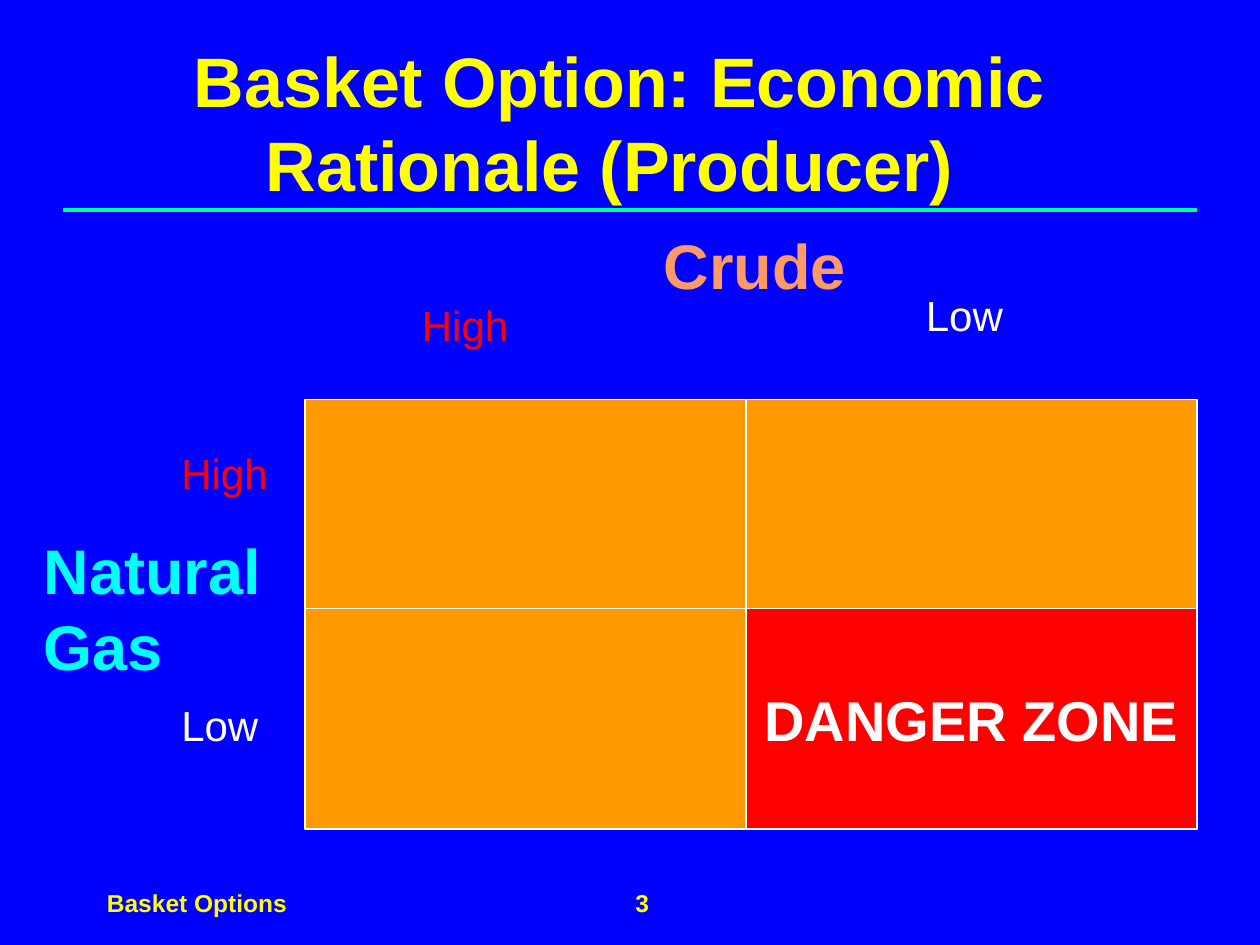
from lxml import etree
from pptx import Presentation
from pptx.dml.color import RGBColor
from pptx.enum.shapes import MSO_CONNECTOR, MSO_SHAPE
from pptx.enum.text import MSO_ANCHOR, MSO_AUTO_SIZE, PP_ALIGN
from pptx.oxml.ns import qn
from pptx.util import Inches, Pt

STRAIGHT, RECTANGLE = MSO_CONNECTOR.STRAIGHT, MSO_SHAPE.RECTANGLE
TOP, MIDDLE, NO_FIT = MSO_ANCHOR.TOP, MSO_ANCHOR.MIDDLE, MSO_AUTO_SIZE.NONE
LEFT, CENTER, RIGHT = PP_ALIGN.LEFT, PP_ALIGN.CENTER, PP_ALIGN.RIGHT

BLUE = RGBColor(0x00, 0x00, 0xFF)
YELLOW = RGBColor(0xFF, 0xFF, 0x00)
GREEN = RGBColor(0x00, 0xFF, 0x99)
ORANGE = RGBColor(0xFF, 0x99, 0x00)
SALMON = RGBColor(0xFF, 0x99, 0x66)
CYAN = RGBColor(0x00, 0xFF, 0xFF)
RED = RGBColor(0xFF, 0x00, 0x00)
WHITE = RGBColor(0xFF, 0xFF, 0xFF)
FONT = "Arial"

# Content: text lines, (left, top, width, height), size, colour, bold, alignment, wrap
TITLE = ["Basket Option: Economic Rationale (Producer) "]
TITLE_PLACE = (0.83, 0.25, 8.17, 1.44)
DANGER = ["DANGER ZONE"]
LABELS = [
    (["Crude"], (5.17, 1.75, 2.1, 0.7), 36, SALMON, True, LEFT, True),
    (["Natural", "Gas"], (0.25, 4.17, 1.92, 1.3), 36, CYAN, True, LEFT, False),
    (["High"], (3.25, 2.33, 0.88, 0.5), 24, RED, False, LEFT, False),
    (["Low"], (7.25, 2.25, 0.81, 0.5), 24, WHITE, False, LEFT, False),
    (["High"], (1.34, 3.5, 0.88, 0.5), 24, RED, False, LEFT, False),
    (["Low"], (1.34, 5.5, 0.81, 0.5), 24, WHITE, False, LEFT, False),
    (["Basket Options"], (0.75, 7, 3.17, 0.5), 14, YELLOW, True, LEFT, True),
    (["3"], (4.75, 7, 0.5, 0.33), 14, YELLOW, True, RIGHT, True),
]

# Matrix edges and inner dividers
MATRIX_LEFT, DIVIDER_X, MATRIX_RIGHT = 2.42, 5.92, 9.5
MATRIX_TOP, DIVIDER_Y, MATRIX_BOTTOM = 3.17, 4.83, 6.58


def write(shape, lines, size, color, bold, align, wrap, anchor=TOP):
    frame = shape.text_frame
    frame.auto_size = NO_FIT
    frame.word_wrap = wrap
    frame.vertical_anchor = anchor
    for index, line in enumerate(lines):
        para = frame.add_paragraph() if index else frame.paragraphs[0]
        para.alignment = align
        span = para.add_run()
        span.text = line
        font = span.font
        font.name, font.size, font.bold = FONT, Pt(size), bold
        font.color.rgb = color


def add_line(page, start, end, color, width):
    ends = [Inches(value) for value in (*start, *end)]
    line = page.shapes.add_connector(STRAIGHT, *ends)
    line.line.color.rgb = color
    line.line.width = Pt(width)
    etree.SubElement(line._element.spPr, qn("a:effectLst"))


def add_cell(page, left, top, right, bottom, color):
    place = (left, top, right - left, bottom - top)
    cell = page.shapes.add_shape(RECTANGLE, *map(Inches, place))
    cell.shadow.inherit = False
    cell.fill.solid()
    cell.fill.fore_color.rgb = color
    cell.line.color.rgb = WHITE
    cell.line.width = Pt(1)
    return cell


deck = Presentation()
deck.slide_width, deck.slide_height = Inches(10), Inches(7.5)
page = deck.slides.add_slide(deck.slide_layouts[5])
page.background.fill.solid()
page.background.fill.fore_color.rgb = BLUE

# Title and rule
title = page.shapes.title
title.left, title.top, title.width, title.height = map(Inches, TITLE_PLACE)
write(title, TITLE, 40, YELLOW, True, CENTER, True)
add_line(page, (9.5, 1.67), (0.5, 1.67), GREEN, 2.25)

# Price matrix
add_cell(page, MATRIX_LEFT, MATRIX_TOP, MATRIX_RIGHT, MATRIX_BOTTOM, ORANGE)
add_line(page, (DIVIDER_X, MATRIX_TOP), (DIVIDER_X, MATRIX_BOTTOM), WHITE, 1)
add_line(page, (MATRIX_LEFT, DIVIDER_Y), (MATRIX_RIGHT, DIVIDER_Y), WHITE, 1)
danger = add_cell(page, DIVIDER_X, DIVIDER_Y, MATRIX_RIGHT, MATRIX_BOTTOM, RED)
write(danger, DANGER, 32, WHITE, True, CENTER, False, MIDDLE)

# Axis labels and footer
for lines, place, *style in LABELS:
    box = page.shapes.add_textbox(*map(Inches, place))
    write(box, lines, *style)

deck.save("out.pptx")
